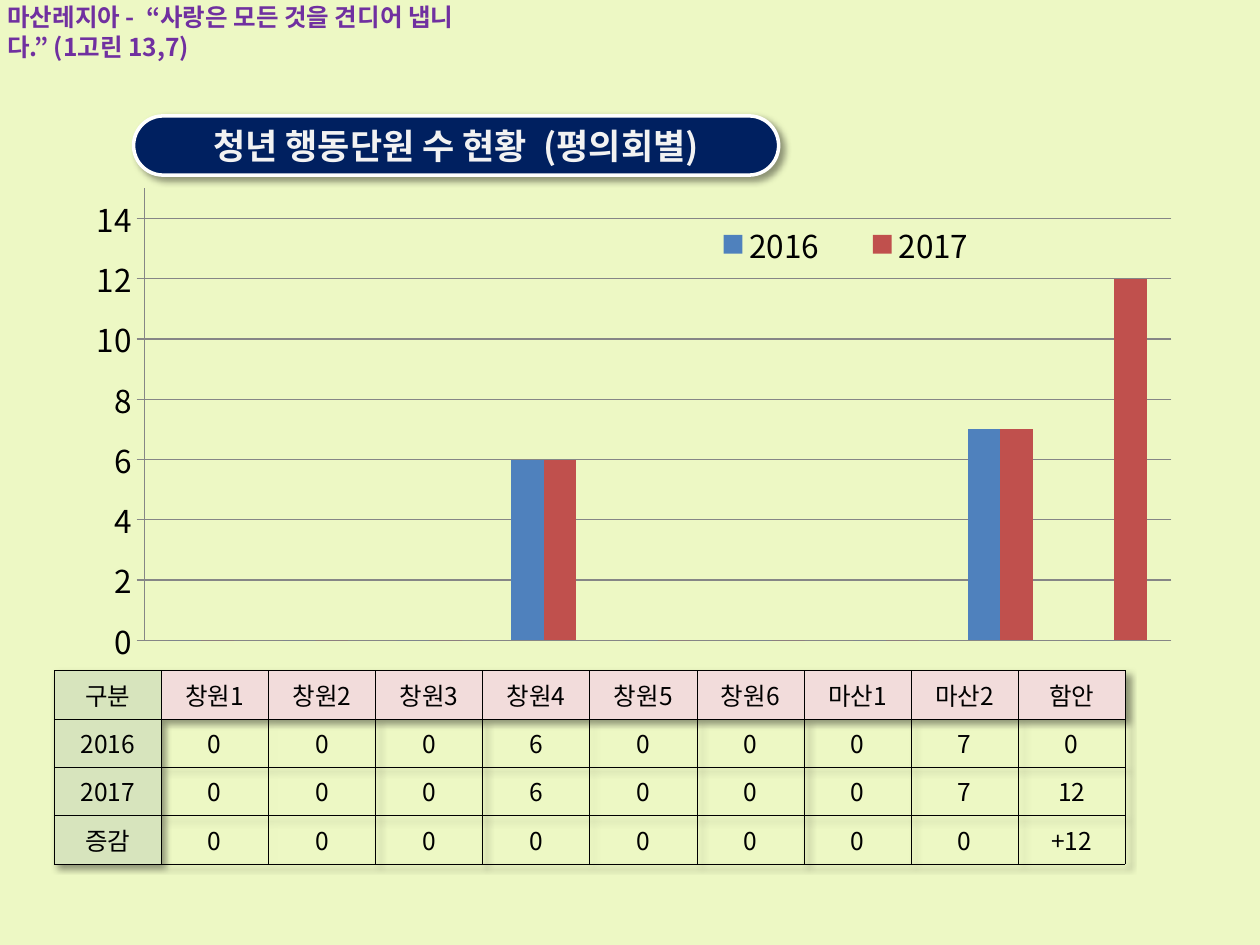
from dataclasses import dataclass

from lxml import etree
from pptx import Presentation
from pptx.chart.data import CategoryChartData
from pptx.dml.color import RGBColor
from pptx.enum.chart import XL_CHART_TYPE, XL_LEGEND_POSITION, XL_TICK_LABEL_POSITION, XL_TICK_MARK
from pptx.enum.shapes import MSO_SHAPE
from pptx.enum.text import MSO_ANCHOR, PP_ALIGN
from pptx.oxml import parse_xml
from pptx.oxml.ns import qn
from pptx.util import Inches, Pt

BARS = XL_CHART_TYPE.COLUMN_CLUSTERED
RIGHT = XL_LEGEND_POSITION.RIGHT
LOW = XL_TICK_LABEL_POSITION.LOW
OUT, NONE = XL_TICK_MARK.OUTSIDE, XL_TICK_MARK.NONE
ROUND = MSO_SHAPE.ROUNDED_RECTANGLE
MIDDLE = MSO_ANCHOR.MIDDLE
LEFT, CENTER = PP_ALIGN.LEFT, PP_ALIGN.CENTER

COLS, ROWS = 100, 75
WIDE, HIGH = Inches(10), Inches(7.5)
DRAW = "http://schemas.openxmlformats.org/drawingml/2006/main"


@dataclass(frozen=True)
class Theme:
    face: str = "Noto Sans CJK KR"
    back: str = "EDF8C4"
    ink: str = "000000"
    verse: str = "7030A0"
    pill: str = "002060"
    edge: str = "FFFFFF"
    title: str = "F2F2F2"
    side: str = "D7E4BD"
    head: str = "F2DCDB"
    grid: str = "868686"
    bars: tuple = ("4F81BD", "C0504D")
    small: int = 14
    mid: int = 18
    large: int = 20


def rgb(code):
    return RGBColor.from_string(code)


def shade():
    return parse_xml(
        f'<a:effectLst xmlns:a="{DRAW}"><a:outerShdw blurRad="{Pt(4)}" dist="{Pt(3)}" '
        'dir="2700000" algn="tl" rotWithShape="0"><a:srgbClr val="000000">'
        '<a:alpha val="40000"/></a:srgbClr></a:outerShdw></a:effectLst>')


class Page:
    def __init__(self, deck, theme):
        self.theme = theme
        self.slide = deck.slides.add_slide(deck.slide_layouts[5])
        fill = self.slide.background.fill
        fill.solid()
        fill.fore_color.rgb = rgb(theme.back)

    def box(self, x, y, w, h):
        return (int(WIDE * x / COLS), int(HIGH * y / ROWS),
                int(WIDE * w / COLS), int(HIGH * h / ROWS))

    def style(self, font, size, color, bold=False):
        font.size, font.bold = Pt(size), bold
        font.color.rgb = rgb(color)
        font.name = self.theme.face
        etree.SubElement(font._rPr, qn("a:ea"), typeface=self.theme.face)

    def label(self, frame, words, size, color, bold=False, align=CENTER):
        para = frame.paragraphs[0]
        para.alignment = align
        run = para.add_run()
        run.text = words
        self.style(run.font, size, color, bold)

    def text(self, words, *area):
        frame = self.slide.shapes.add_textbox(*self.box(*area)).text_frame
        frame.word_wrap = True
        self.label(frame, words, self.theme.small, self.theme.verse, True, LEFT)

    def title(self, words, *area):
        place = self.box(*area)
        pill = self.slide.shapes.add_shape(ROUND, *place)
        pill.adjustments[0] = 0.5
        pill.fill.solid()
        pill.fill.fore_color.rgb = rgb(self.theme.pill)
        pill.line.color.rgb = rgb(self.theme.edge)
        pill.line.width = Pt(2)
        pill._element.spPr.append(shade())
        name = self.slide.shapes.title
        name.left, name.top, name.width, name.height = place
        name.text_frame.vertical_anchor = MIDDLE
        self.label(name.text_frame, words, self.theme.large, self.theme.title, True)
        pill._element.addnext(name._element)

    def layout(self, part, spot, inner, **share):
        for old in part.findall(qn("c:layout")):
            part.remove(old)
        node = etree.Element(qn("c:layout"))
        hand = etree.SubElement(node, qn("c:manualLayout"))
        if inner:
            etree.SubElement(hand, qn("c:layoutTarget"), val="inner")
        for key in ("xMode", "yMode"):
            etree.SubElement(hand, qn(f"c:{key}"), val="edge")
        for key, size in share.items():
            etree.SubElement(hand, qn(f"c:{key}"), val=str(size))
        part.insert(spot, node)

    def chart(self, names, rows, *area):
        data = CategoryChartData()
        data.categories = names
        for name, nums in rows.items():
            data.add_series(name, nums)
        chart = self.slide.shapes.add_chart(BARS, *self.box(*area), data).chart
        self.style(chart.font, self.theme.mid, self.theme.ink)
        chart.has_title = False
        plot = chart.plots[0]
        plot.gap_width, plot.overlap, plot.vary_by_categories = 150, 0, False
        for bar, color in zip(plot.series, self.theme.bars):
            bar.format.fill.solid()
            bar.format.fill.fore_color.rgb = rgb(color)
        chart.category_axis.visible = False
        axis = chart.value_axis
        axis.minimum_scale, axis.maximum_scale, axis.major_unit = 0, 15, 2
        axis.major_tick_mark, axis.minor_tick_mark = OUT, NONE
        axis.tick_label_position = LOW
        axis.has_major_gridlines = True
        for line in (axis.format.line, axis.major_gridlines.format.line):
            line.color.rgb = rgb(self.theme.grid)
            line.width = Pt(0.75)
        chart.has_legend = True
        legend = chart.legend
        legend.position, legend.include_in_layout = RIGHT, False
        self.layout(legend._element, 1, False, x=0.54, y=0.11, w=0.29, h=0.1)
        inside = chart._chartSpace.chart.plotArea
        self.layout(inside, 0, True, x=0.07, y=0.06, w=0.9, h=0.81)

    def border(self, cell):
        props = cell._tc.get_or_add_tcPr()
        for spot, side in enumerate("LRTB"):
            props.insert(spot, parse_xml(
                f'<a:ln{side} xmlns:a="{DRAW}" w="{Pt(0.25)}"><a:solidFill>'
                f'<a:srgbClr val="{self.theme.ink}"/></a:solidFill></a:ln{side}>'))

    def table(self, rows, *area):
        table = self.slide.shapes.add_table(
            len(rows), len(rows[0]), *self.box(*area)).table
        table.first_row = table.horz_banding = False
        table._tbl.tblPr.insert(0, shade())
        for r, row in enumerate(rows):
            for c, words in enumerate(row):
                cell = table.cell(r, c)
                cell.vertical_anchor = MIDDLE
                if r and c:
                    cell.fill.background()
                else:
                    cell.fill.solid()
                    cell.fill.fore_color.rgb = rgb(self.theme.head if c else self.theme.side)
                self.border(cell)
                self.label(cell.text_frame, str(words), self.theme.small, self.theme.ink)


def main():
    deck = Presentation()
    deck.slide_width, deck.slide_height = WIDE, HIGH
    page = Page(deck, Theme())
    groups = [f"창원{n}" for n in range(1, 7)] + ["마산1", "마산2", "함안"]
    years = {"2016": [0, 0, 0, 6, 0, 0, 0, 7, 0],
             "2017": [0, 0, 0, 6, 0, 0, 0, 7, 12]}
    change = [f"{new - old:+d}" if new != old else "0" for old, new in zip(*years.values())]
    rows = [["구분", *groups], *([year, *nums] for year, nums in years.items()),
            ["증감", *change]]
    page.table(rows, 4.3, 53.2, 85, 15.2)
    page.chart([str(n) for n in range(1, 10)], years, 5.1, 12.3, 90.6, 44.3)
    page.text("마산레지아 -  “사랑은 모든 것을 견디어 냅니다.” (1고린 13,7)",
              -0.4, -0.3, 39.3, 3.4)
    page.title("청년 행동단원 수 현황  (평의회별)", 10.6, 9.2, 51.2, 4.7)
    deck.save("out.pptx")


if __name__ == "__main__":
    main()
